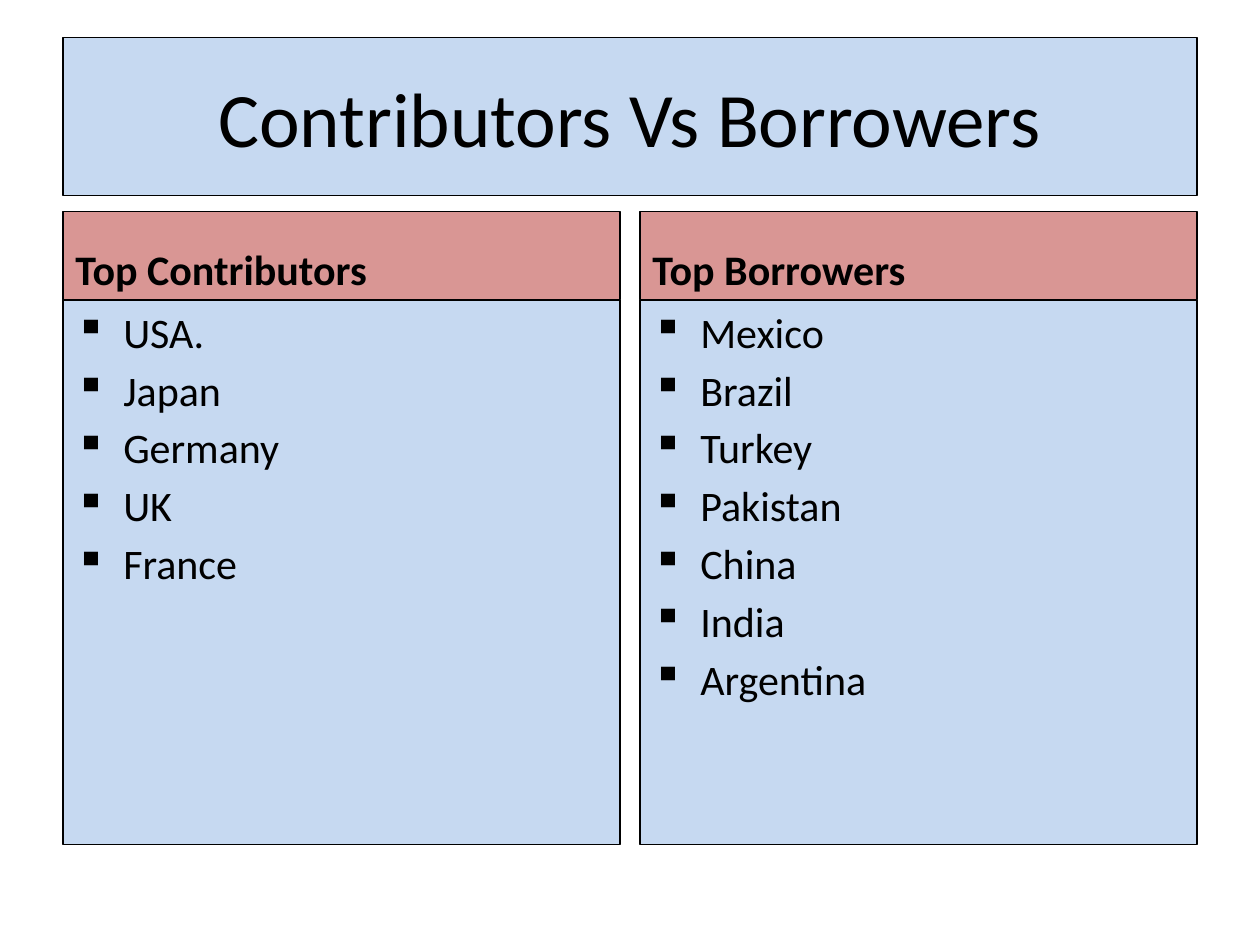
import dataclasses

import lxml.etree
import pptx
import pptx.dml.color
import pptx.enum.shapes
import pptx.enum.text
import pptx.oxml.ns
import pptx.util

Inches = pptx.util.Inches
Pt = pptx.util.Pt
Align = pptx.enum.text.PP_ALIGN
Anchor = pptx.enum.text.MSO_ANCHOR


@dataclasses.dataclass(frozen=True)
class Theme:
    font: str = "Calibri"
    ink: str = "000000"
    blue: str = "C6D9F1"
    red: str = "D99694"
    title: int = 44
    body: int = 24
    gap: float = 4.3
    line: float = 0.75


THEME = Theme()
LEFT, WIDTH = 0.5, 9
PANEL = 4.42
LISTS = [
    ("Top Contributors", ["USA.", "Japan", "Germany", "UK", "France"]),
    ("Top Borrowers", ["Mexico", "Brazil", "Turkey", "Pakistan", "China",
                       "India", "Argentina"]),
]


def color(value):
    return pptx.dml.color.RGBColor.from_string(value)


def add_box(slide, area, fill, lines, size, anchor, align=Align.LEFT,
            bold=False, gap=0):
    box = slide.shapes.add_shape(
        pptx.enum.shapes.MSO_SHAPE.RECTANGLE, *map(Inches, area))
    box.shadow.inherit = False
    box.fill.solid()
    box.fill.fore_color.rgb = color(fill)
    box.line.color.rgb = color(THEME.ink)
    box.line.width = Pt(THEME.line)
    frame = box.text_frame
    frame.word_wrap = True
    frame.vertical_anchor = anchor
    frame.text = "\n".join(lines)
    for para in frame.paragraphs:
        para.alignment = align
        para.space_before = Pt(gap)
        para.font.name = THEME.font
        para.font.size = Pt(size)
        para.font.bold = bold
        para.font.color.rgb = color(THEME.ink)
    return box


def add_bullets(box):
    for para in box.text_frame.paragraphs:
        props = para._p.get_or_add_pPr()
        props.set("marL", str(Inches(0.38)))
        props.set("indent", str(Inches(-0.38)))
        mark = lxml.etree.Element(pptx.oxml.ns.qn("a:buChar"), char="▪")
        props.find(pptx.oxml.ns.qn("a:defRPr")).addprevious(mark)


def add_panel(slide, left, head, items):
    add_box(slide, (left, 1.68, PANEL, 0.7), THEME.red, [head], THEME.body,
            Anchor.BOTTOM, bold=True, gap=THEME.gap)
    body = add_box(slide, (left, 2.38, PANEL, 4.32), THEME.blue, items,
                   THEME.body, Anchor.TOP, gap=THEME.gap)
    add_bullets(body)


def main():
    deck = pptx.Presentation()
    deck.slide_width = Inches(10)
    deck.slide_height = Inches(7.5)
    slide = deck.slides.add_slide(deck.slide_layouts[6])
    add_box(slide, (LEFT, 0.3, WIDTH, 1.25), THEME.blue,
            ["Contributors Vs Borrowers"], THEME.title, Anchor.MIDDLE,
            Align.CENTER)
    for col, (head, items) in enumerate(LISTS):
        add_panel(slide, LEFT + col * (WIDTH - PANEL), head, items)
    deck.save("out.pptx")


if __name__ == "__main__":
    main()
